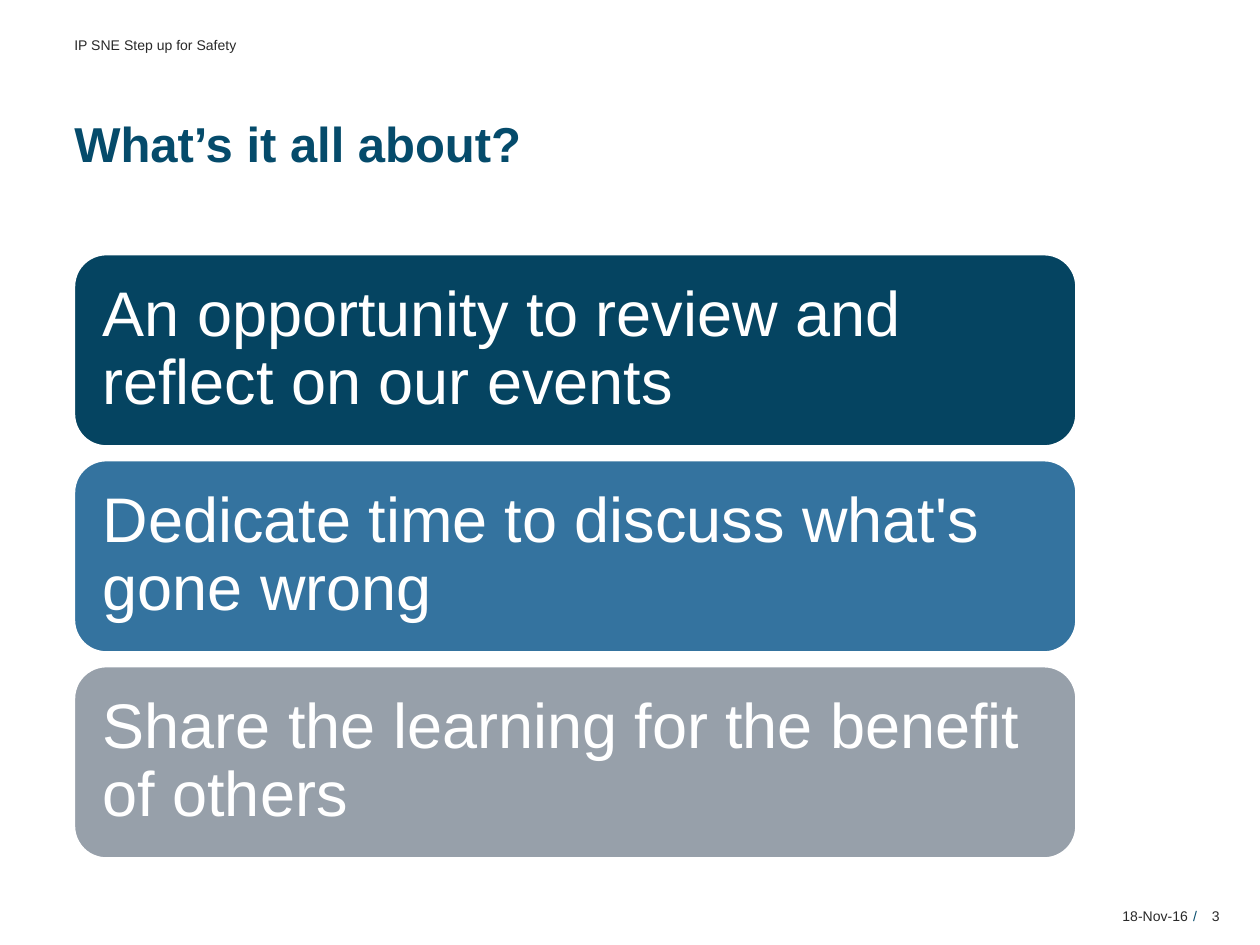
"""Builds the safety briefing slide with three stacked message cards."""
import pptx
import pptx.dml.color
import pptx.enum.shapes
import pptx.enum.text
import pptx.util

Inches = pptx.util.Inches
Align = pptx.enum.text.PP_ALIGN
Anchor = pptx.enum.text.MSO_ANCHOR


def color(value):
    """Return the colour for a hex string."""
    return pptx.dml.color.RGBColor.from_string(value)


def write(shape, text, size, ink, inset=0, anchor=Anchor.MIDDLE, align=Align.LEFT, bold=False):
    """Put one formatted paragraph into a shape."""
    frame = shape.text_frame
    frame_format = {
        "word_wrap": True,
        "auto_size": pptx.enum.text.MSO_AUTO_SIZE.NONE,
        "vertical_anchor": anchor,
    }
    for side in ("left", "top", "right", "bottom"):
        frame_format[f"margin_{side}"] = Inches(inset)
    for name, value in frame_format.items():
        setattr(frame, name, value)
    para = frame.paragraphs[0]
    para.alignment = align
    span = para.add_run()
    span.text = text
    font_format = {"name": "Arial", "size": pptx.util.Pt(size), "bold": bold}
    for name, value in font_format.items():
        setattr(span.font, name, value)
    span.font.color.rgb = color(ink)
    return para


deck = pptx.Presentation()
deck.slide_width, deck.slide_height = Inches(10), Inches(7.5)
page = deck.slides.add_slide(deck.slide_layouts[5])

left, width = 0.59, 7.95
title = page.shapes.title
title_place = {"left": left, "top": 0.9, "width": width, "height": 0.47}
for name, value in title_place.items():
    setattr(title, name, Inches(value))
write(title, "What’s it all about?", 28, "054B6B", anchor=Anchor.BOTTOM, bold=True)

cards = [
    ("An opportunity to review and reflect on our events", "054461"),
    ("Dedicate time to discuss what's gone wrong", "34739F"),
    ("Share the learning for the benefit of others", "97A0AA"),
]
card_top, card_height, card_step = 2.02, 1.52, 1.635
for index, (text, fill) in enumerate(cards):
    card = page.shapes.add_shape(
        pptx.enum.shapes.MSO_SHAPE.ROUNDED_RECTANGLE,
        Inches(left), Inches(card_top + index * card_step), Inches(width), Inches(card_height),
    )
    card.shadow.inherit = False
    card.fill.solid()
    card.fill.fore_color.rgb = color(fill)
    card.line.color.rgb = color("FFFFFF")
    card.line.width = pptx.util.Pt(1)
    para = write(card, text, 36, "FFFFFF", inset=0.15)
    para.line_spacing = 0.9

labels = [
    ("IP SNE Step up for Safety", left, 0.26, 4.72, "292929", Align.LEFT),
    ("18-Nov-16", 7.1, 7.17, 2.33, "292929", Align.RIGHT),
    ("/", 9.47, 7.17, 0.04, "054B6B", Align.LEFT),
    ("3", 9.52, 7.17, 0.16, "292929", Align.RIGHT),
]
for text, label_left, label_top, label_width, ink, align in labels:
    box = page.shapes.add_textbox(
        Inches(label_left), Inches(label_top), Inches(label_width), Inches(0.2)
    )
    write(box, text, 8, ink, align=align)

deck.save("out.pptx")
